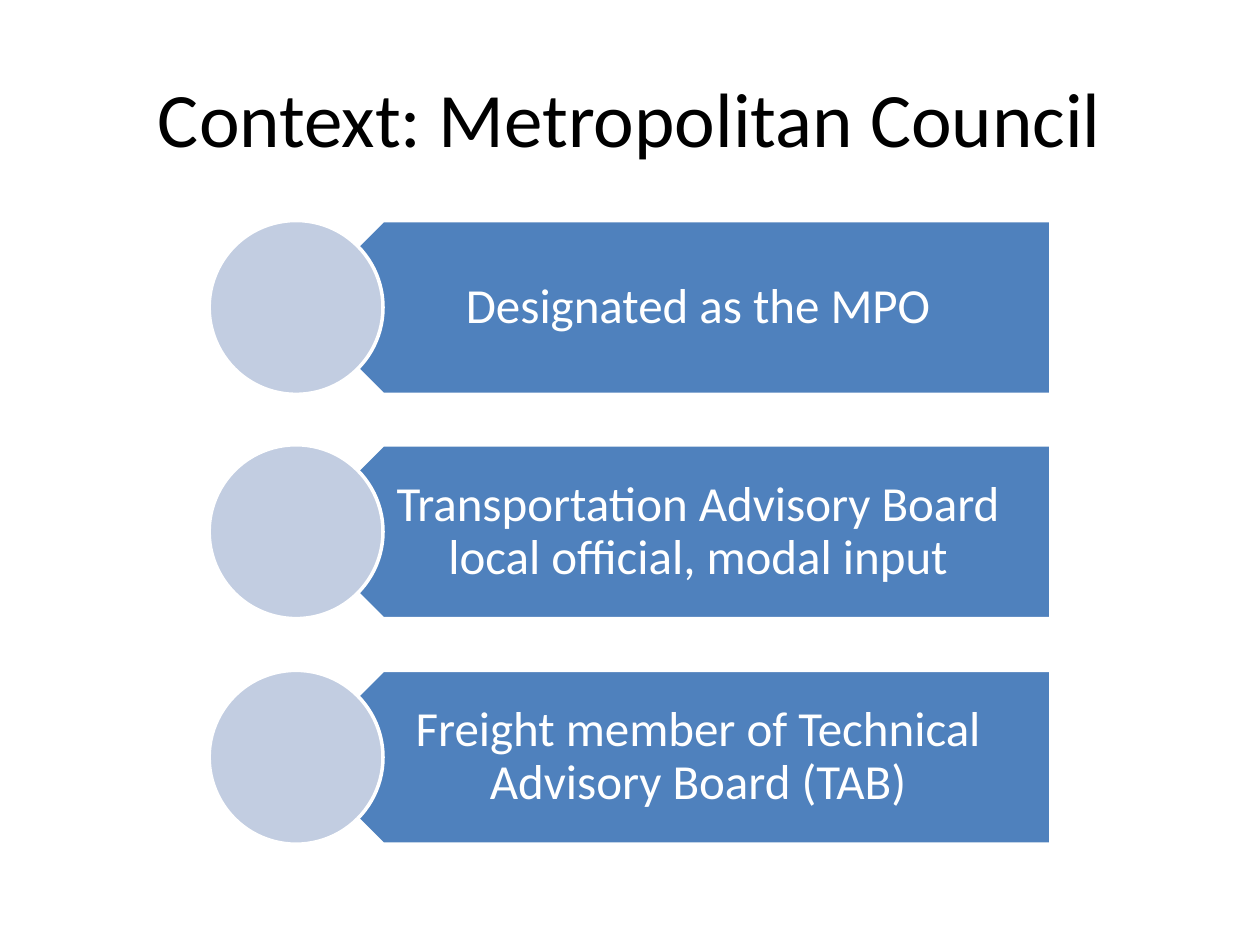
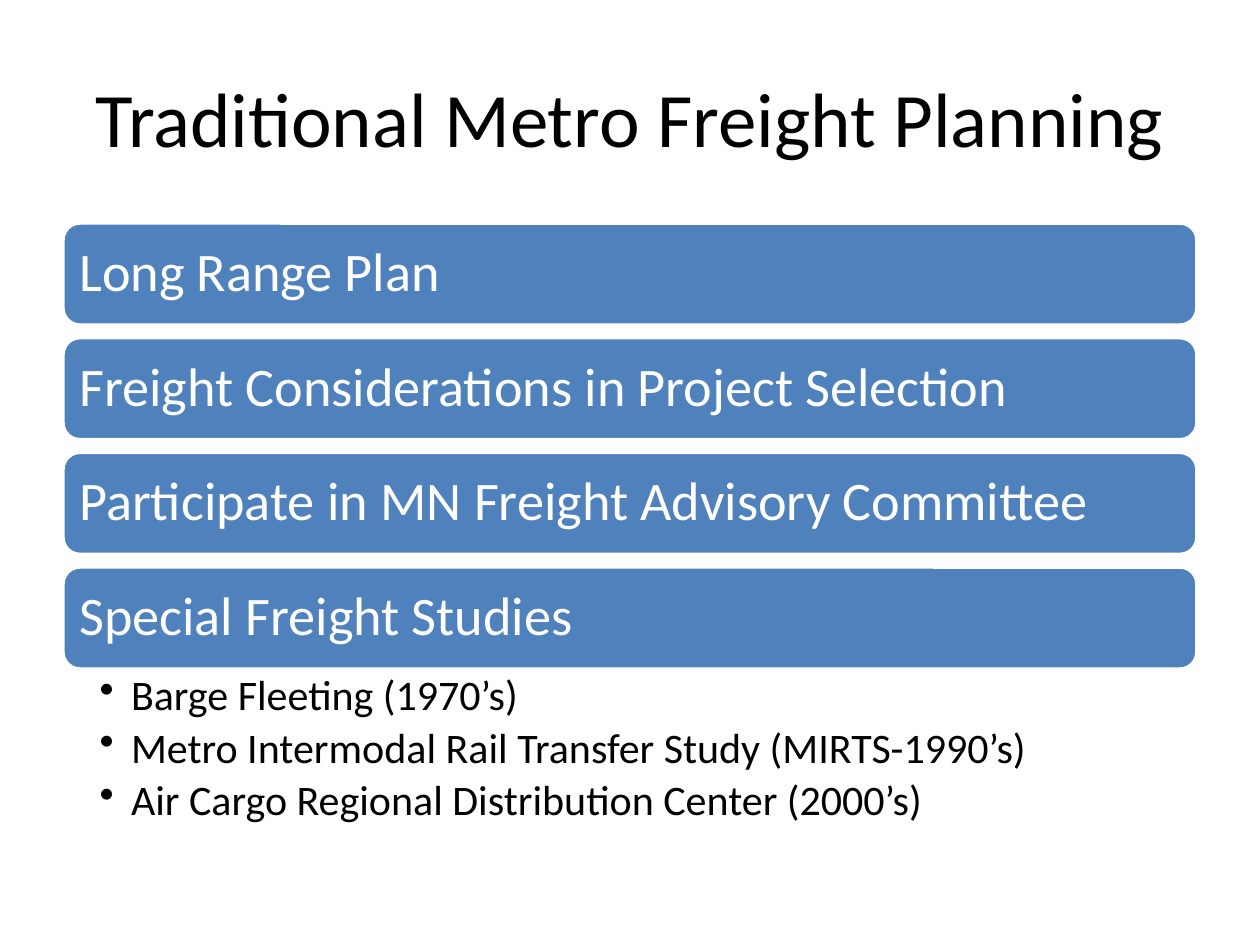
import pptx
import pptx.util
import pptx.dml.color
import pptx.enum.shapes
import pptx.enum.text
import pptx.oxml
import pptx.oxml.ns

PX = 9144  # EMU in one px, 100 px to the inch
BLUE = pptx.dml.color.RGBColor(0x4F, 0x81, 0xBD)
PALE = pptx.dml.color.RGBColor(0xC2, 0xCD, 0xE1)
WHITE = pptx.dml.color.RGBColor(0xFF, 0xFF, 0xFF)
BLACK = pptx.dml.color.RGBColor(0x00, 0x00, 0x00)
KIND = pptx.enum.shapes.MSO_SHAPE
MID = pptx.enum.text.MSO_ANCHOR.MIDDLE
TOP = pptx.enum.text.MSO_ANCHOR.TOP
LEFT = pptx.enum.text.PP_ALIGN.LEFT
CENTER = pptx.enum.text.PP_ALIGN.CENTER

# Text styles: colour, frame, paragraph and font values
HEAD = dict(
    color=BLACK, pad=(10, 5, 10, 5), frame=dict(vertical_anchor=MID),
    para=dict(alignment=CENTER), font=dict(size=pptx.util.Pt(44)))
LABEL = dict(
    color=WHITE, pad=(61, 12, 22, 12), frame=dict(vertical_anchor=MID),
    para=dict(alignment=CENTER, line_spacing=0.9),
    font=dict(size=pptx.util.Pt(28)))
BAR = dict(
    color=WHITE, pad=(9, 9, 9, 9), frame=dict(vertical_anchor=MID),
    para=dict(alignment=LEFT, line_spacing=0.9),
    font=dict(size=pptx.util.Pt(31)))
LIST = dict(
    color=BLACK, pad=(29, 4, 24, 4), frame=dict(vertical_anchor=TOP),
    para=dict(alignment=LEFT, line_spacing=0.9,
              space_after=pptx.util.Pt(4.2)),
    font=dict(size=pptx.util.Pt(24)))


def draw(slide, kind, box, fill):
    """Add a filled shape with a white outline."""
    shape = slide.shapes.add_shape(kind, *[n * PX for n in box])
    shape.shadow.inherit = False
    shape.fill.solid()
    shape.fill.fore_color.rgb = fill
    shape.line.color.rgb = WHITE
    shape.line.width = pptx.util.Pt(2)
    return shape


def write(shape, lines, style):
    """Fill a shape or text box with styled paragraphs."""
    frame = shape.text_frame
    frame.word_wrap = True
    for side, pad in zip(("left", "top", "right", "bottom"), style["pad"]):
        setattr(frame, "margin_" + side, pad * PX)
    frame.text = "\n".join(lines)
    for para in frame.paragraphs:
        para.font.name = "Calibri"
        para.font.color.rgb = style["color"]
        for part, key in ((frame, "frame"), (para, "para"),
                          (para.font, "font")):
            for name, value in style[key].items():
                setattr(part, name, value)


deck = pptx.Presentation()
deck.slide_width = 1000 * PX
deck.slide_height = 750 * PX

# Slides with their titles
pages = []
for title in ("Context: Metropolitan Council",
              "Traditional Metro Freight Planning"):
    page = deck.slides.add_slide(deck.slide_layouts[6])
    box = page.shapes.add_textbox(50 * PX, 30 * PX, 900 * PX, 125 * PX)
    write(box, [title], HEAD)
    pages.append(page)
council, plans = pages

# Council roles: a left-pointing plate behind a disc, one per row
SIZE = 138
roles = ("Designated as the MPO",
         "Transportation Advisory Board local official, modal input",
         "Freight member of Technical Advisory Board (TAB)")
for row, role in enumerate(roles):
    top = 175 + round(178.5 * row)
    plate = draw(council, KIND.PENTAGON, (235, top, 599, SIZE), BLUE)
    plate.rotation = 180
    label = council.shapes.add_textbox(
        235 * PX, top * PX, 599 * PX, SIZE * PX)
    write(label, [role], LABEL)
    draw(council, KIND.OVAL, (166, top, SIZE, SIZE), PALE)

# Planning bars
bars = ("Long Range Plan",
        "Freight Considerations in Project Selection",
        "Participate in MN Freight Advisory Committee",
        "Special Freight Studies")
for row, text in enumerate(bars):
    bar = draw(plans, KIND.ROUNDED_RECTANGLE,
               (50, 177 + 91 * row, 900, 81), BLUE)
    write(bar, [text], BAR)

# Bulleted studies under the last bar
studies = plans.shapes.add_textbox(50 * PX, 531 * PX, 900 * PX, 137 * PX)
write(studies, ["Barge Fleeting (1970’s)",
                "Metro Intermodal Rail Transfer Study (MIRTS-1990’s)",
                "Air Cargo Regional Distribution Center (2000’s)"], LIST)
for para in studies.text_frame.paragraphs:
    props = para._p.get_or_add_pPr()
    props.set("marL", str(25 * PX))
    props.set("indent", str(-25 * PX))
    mark = pptx.oxml.parse_xml(
        '<a:buChar %s char="•"/>' % pptx.oxml.ns.nsdecls("a"))
    props.insert_element_before(mark, "a:tabLst", "a:defRPr", "a:extLst")

deck.save("out.pptx")
